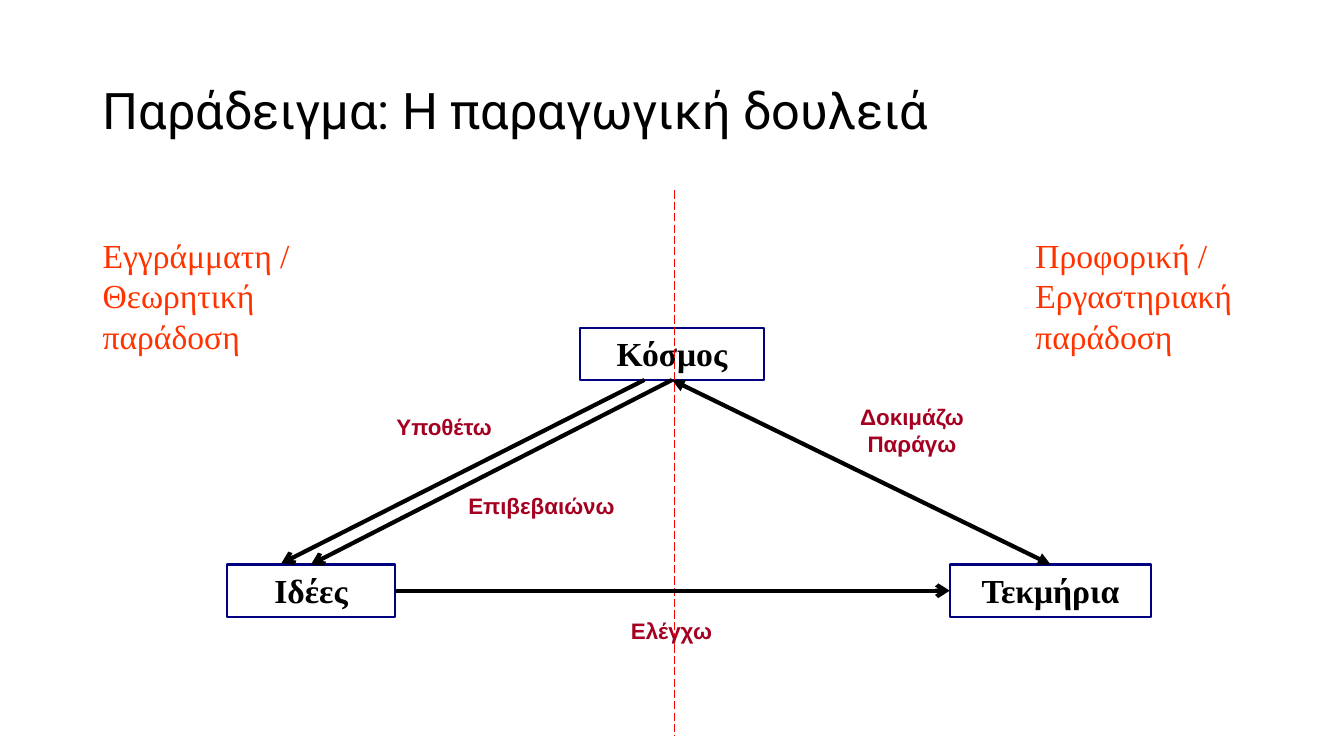
from typing import NamedTuple, Optional

from lxml.etree import SubElement
from pptx import Presentation
from pptx.dml.color import RGBColor
from pptx.enum.dml import MSO_LINE
from pptx.enum.shapes import MSO_CONNECTOR, MSO_SHAPE
from pptx.enum.text import MSO_ANCHOR, MSO_AUTO_SIZE, PP_ALIGN
from pptx.oxml.ns import qn
from pptx.util import Inches, Pt

SERIF = "Times New Roman"
BLACK, NAVY, RED, ORANGE, CRIMSON = "000000", "000080", "FF0000", "FF3300", "A50021"
TOP, LEFT, BOTTOM, RIGHT = range(4)


class Label(NamedTuple):
    text: str
    left: float
    top: float
    width: float
    height: float


class Joint(NamedTuple):
    box: str
    side: int


class Line(NamedTuple):
    start: tuple[float, float]
    end: tuple[float, float]
    color: str = BLACK
    width: float = 3
    head: Optional[str] = None
    tail: Optional[str] = None
    dash: Optional[MSO_LINE] = None
    start_joint: Optional[Joint] = None
    end_joint: Optional[Joint] = None


TITLE = Label("Παράδειγμα: Η παραγωγική δουλειά", 0.92, 0.4, 11.5, 1.45)
BOXES = [
    Label("Κόσμος", 5.75, 3.25, 1.83, 0.52),
    Label("Ιδέες", 2.25, 5.6, 1.67, 0.52),
    Label("Τεκμήρια", 9.42, 5.6, 2, 0.52),
]
TRADITIONS = [
    Label("Εγγράμματη / Θεωρητική παράδοση", 0.92, 2.28, 2.17, 1.31),
    Label("Προφορική / Εργαστηριακή παράδοση", 10.17, 2.28, 2.25, 1.31),
]
ACTIONS = [
    Label("Δοκιμάζω Παράγω", 8.25, 3.95, 1.59, 0.64),
    Label("Ελέγχω", 5.62, 6.07, 2.08, 0.37),
    Label("Υποθέτω", 3.66, 4.05, 1.49, 0.37),
    Label("Επιβεβαιώνω", 4.51, 4.83, 1.72, 0.37),
]
LINES = [
    Line((6.72, 3.78), (10.46, 5.6), head="triangle", tail="triangle",
         start_joint=Joint("Κόσμος", BOTTOM), end_joint=Joint("Τεκμήρια", TOP)),
    Line((6.69, 1.89), (6.69, 7.3), RED, 0.75, dash=MSO_LINE.LONG_DASH),
    Line((6.39, 3.77), (2.79, 5.59), tail="arrow"),
    Line((3.92, 5.86), (9.42, 5.86), tail="arrow",
         start_joint=Joint("Ιδέες", RIGHT), end_joint=Joint("Τεκμήρια", LEFT)),
    Line((6.72, 3.79), (3.11, 5.61), tail="arrow",
         start_joint=Joint("Κόσμος", BOTTOM), end_joint=Joint("Ιδέες", TOP)),
]


def rgb(color: str) -> RGBColor:
    return RGBColor.from_string(color)


def write_text(shape, text: str, *, font: str, size: float, color: str = BLACK,
               bold: bool = False, align=PP_ALIGN.LEFT, anchor=MSO_ANCHOR.TOP,
               line_spacing: float = 1.0, auto_size=MSO_AUTO_SIZE.SHAPE_TO_FIT_TEXT) -> None:
    frame = shape.text_frame
    frame.word_wrap = True
    frame.auto_size = auto_size
    frame.vertical_anchor = anchor
    paragraph = frame.paragraphs[0]
    paragraph.alignment = align
    paragraph.line_spacing = line_spacing
    run = paragraph.add_run()
    run.text = text
    run.font.name = font
    run.font.size = Pt(size)
    run.font.bold = bold
    run.font.color.rgb = rgb(color)


def add_label(slide, label: Label, **text_format) -> None:
    shape = slide.shapes.add_textbox(*map(Inches, label[1:]))
    write_text(shape, label.text, **text_format)


def add_box(slide, label: Label):
    shape = slide.shapes.add_shape(MSO_SHAPE.RECTANGLE, *map(Inches, label[1:]))
    shape.shadow.inherit = False
    shape.fill.background()
    shape.line.color.rgb = rgb(NAVY)
    shape.line.width = Pt(1.5)
    write_text(shape, label.text, font=SERIF, size=24, bold=True, align=PP_ALIGN.CENTER)
    return shape


def add_line(slide, line: Line, boxes: dict) -> None:
    connector = slide.shapes.add_connector(
        MSO_CONNECTOR.STRAIGHT, *map(Inches, line.start + line.end))
    connector.line.color.rgb = rgb(line.color)
    connector.line.width = Pt(line.width)
    if line.dash:
        connector.line.dash_style = line.dash
    properties = connector.line._get_or_add_ln()
    for tag, arrow in (("a:headEnd", line.head), ("a:tailEnd", line.tail)):
        if arrow:
            SubElement(properties, qn(tag), type=arrow)
    SubElement(connector._element.spPr, qn("a:effectLst"))
    if line.start_joint:
        connector.begin_connect(boxes[line.start_joint.box], line.start_joint.side)
    if line.end_joint:
        connector.end_connect(boxes[line.end_joint.box], line.end_joint.side)


def main() -> None:
    presentation = Presentation()
    presentation.slide_width = Inches(13.33)
    presentation.slide_height = Inches(7.5)
    slide = presentation.slides.add_slide(presentation.slide_layouts[6])

    add_label(slide, TITLE, font="Roboto", size=36, anchor=MSO_ANCHOR.MIDDLE,
              line_spacing=0.9, auto_size=MSO_AUTO_SIZE.NONE)
    boxes = {label.text: add_box(slide, label) for label in BOXES}
    for line in LINES:
        add_line(slide, line, boxes)
    for label in TRADITIONS:
        add_label(slide, label, font=SERIF, size=24, color=ORANGE)
    for label in ACTIONS:
        add_label(slide, label, font="Arial", size=16, color=CRIMSON, bold=True,
                  align=PP_ALIGN.CENTER)
    presentation.save("out.pptx")


if __name__ == "__main__":
    main()
